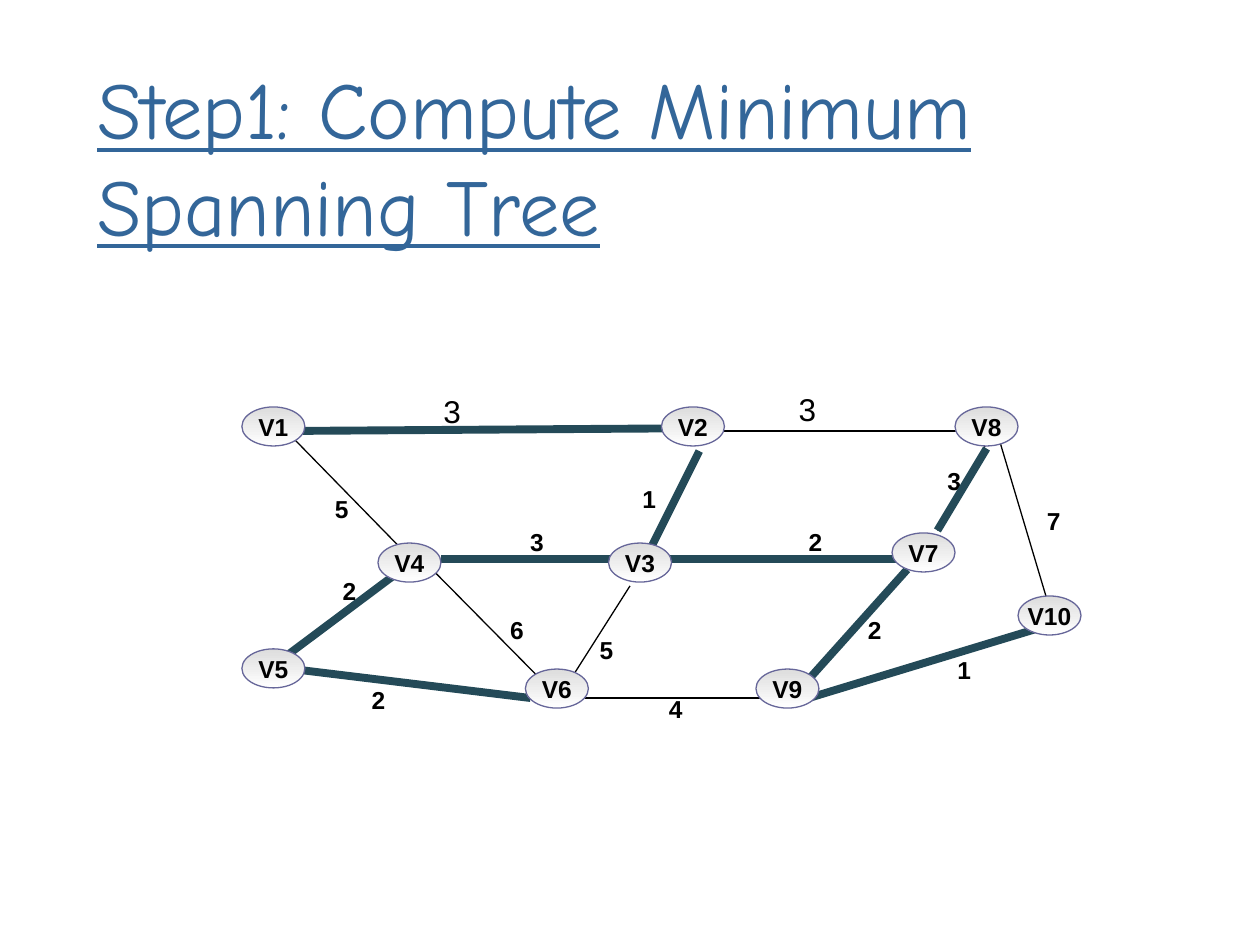
from dataclasses import dataclass
from typing import Optional

from pptx import Presentation
from pptx import util as u
from pptx.dml.color import RGBColor
from pptx.enum import shapes, text
from pptx.oxml import xmlchemy
from pptx.oxml.ns import qn
from lxml import etree

PX = 9144
BLACK = RGBColor(0x00, 0x00, 0x00)
TREE = RGBColor(0x24, 0x4A, 0x58)
TITLE = RGBColor(0x33, 0x66, 0x99)
OUTLINE = RGBColor(0x66, 0x66, 0x99)
GRAY = RGBColor(0xDD, 0xDD, 0xDD)
WHITE = RGBColor(0xFF, 0xFF, 0xFF)
NODE_W, NODE_H = 50, 31

Point = tuple[int, int]


@dataclass(frozen=True)
class Node:
    name: str
    x: int
    y: int


@dataclass(frozen=True)
class Edge:
    start: Point
    end: Point
    weight: str
    label: Point
    tree_end: Optional[Point] = None
    large: bool = False


NODES = [
    Node("V1", 192, 323), Node("V2", 525, 323), Node("V8", 758, 323),
    Node("V4", 300, 431), Node("V3", 483, 431), Node("V7", 708, 423),
    Node("V5", 192, 515), Node("V6", 417, 531), Node("V9", 600, 531),
    Node("V10", 808, 473),
]

EDGES = [
    Edge((240, 342), (539, 342), "3", (342, 306), (533, 340), large=True),
    Edge((233, 348), (319, 436), "5", (256, 387)),
    Edge((350, 444), (492, 444), "3", (411, 413), (492, 444)),
    Edge((500, 465), (453, 539), "5", (466, 499)),
    Edge((516, 436), (555, 358), "1", (500, 379), (555, 358)),
    Edge((571, 342), (776, 342), "3", (624, 305), large=True),
    Edge((744, 421), (784, 350), "3", (742, 365), (783, 356)),
    Edge((524, 444), (720, 444), "2", (632, 413), (720, 444)),
    Edge((461, 554), (610, 554), "4", (521, 546)),
    Edge((232, 531), (429, 554), "2", (285, 539), (421, 554)),
    Edge((319, 452), (224, 523), "2", (262, 452), (224, 523)),
    Edge((343, 452), (429, 539), "6", (395, 483)),
    Edge((720, 452), (642, 539), "2", (679, 483), (642, 539)),
    Edge((791, 342), (831, 476), "7", (821, 397)),
    Edge((642, 554), (823, 499), "1", (750, 515), (823, 499)),
]


def add_run(p, content: str, font: str, size: int, color: RGBColor,
            bold: bool = False, underline: bool = False) -> None:
    r = p.add_run()
    r.text = content
    r.font.name = font
    r.font.size = u.Pt(size)
    r.font.color.rgb = color
    r.font.bold = bold
    r.font.underline = underline


def add_title(s, content: str) -> None:
    sp = s.shapes.title
    sp.left, sp.top, sp.width, sp.height = (v * PX for v in (67, 42, 867, 165))
    tf = sp.text_frame
    tf.word_wrap = True
    tf.auto_size = text.MSO_AUTO_SIZE.SHAPE_TO_FIT_TEXT
    tf.vertical_anchor = text.MSO_ANCHOR.TOP
    p = tf.paragraphs[0]
    p.alignment = text.PP_ALIGN.LEFT
    add_run(p, content, "Comic Neue", 46, TITLE, underline=True)


def add_line(s, start: Point, end: Point, color: RGBColor, width: float) -> None:
    ends = [v * PX for v in (*start, *end)]
    line = s.shapes.add_connector(shapes.MSO_CONNECTOR.STRAIGHT, *ends)
    line.line.color.rgb = color
    line.line.width = u.Pt(width)
    etree.SubElement(line._element.spPr, qn("a:effectLst"))


def add_weight(s, edge: Edge) -> None:
    w, h = (34, 40) if edge.large else (31, 33)
    x, y = edge.label
    sp = s.shapes.add_textbox(x * PX, y * PX, w * PX, h * PX)
    tf = sp.text_frame
    tf.word_wrap = False
    tf.auto_size = text.MSO_AUTO_SIZE.SHAPE_TO_FIT_TEXT
    add_run(tf.paragraphs[0], edge.weight, "Arial", 18 if edge.large else 14,
            BLACK, bold=not edge.large)


def add_node(s, node: Node) -> None:
    sp = s.shapes.add_shape(shapes.MSO_SHAPE.FLOWCHART_CONNECTOR, node.x * PX,
                            node.y * PX, NODE_W * PX, NODE_H * PX)
    sp.shadow.inherit = False
    sp.fill.gradient()
    sp.fill.gradient_angle = 270
    for stop, color in zip(sp.fill.gradient_stops, (GRAY, WHITE)):
        stop.color.rgb = color
    sp.line.color.rgb = OUTLINE
    sp.line.width = u.Pt(0.75)
    tf = sp.text_frame
    tf.word_wrap = False
    tf.vertical_anchor = text.MSO_ANCHOR.MIDDLE
    p = tf.paragraphs[0]
    p.alignment = text.PP_ALIGN.CENTER
    add_run(p, node.name, "Arial", 14, BLACK, bold=True)


def main() -> None:
    prs = Presentation()
    prs.slide_width, prs.slide_height = 1000 * PX, 750 * PX
    s = prs.slides.add_slide(prs.slide_layouts[5])
    add_title(s, "Step1: Compute Minimum Spanning Tree")
    for edge in EDGES:
        add_line(s, edge.start, edge.end, BLACK, 0.75)
    for edge in EDGES:
        add_weight(s, edge)
    for edge in EDGES:
        if edge.tree_end:
            add_line(s, edge.start, edge.tree_end, TREE, 4.5)
    for node in NODES:
        add_node(s, node)
    prs.save("out.pptx")


if __name__ == "__main__":
    main()
